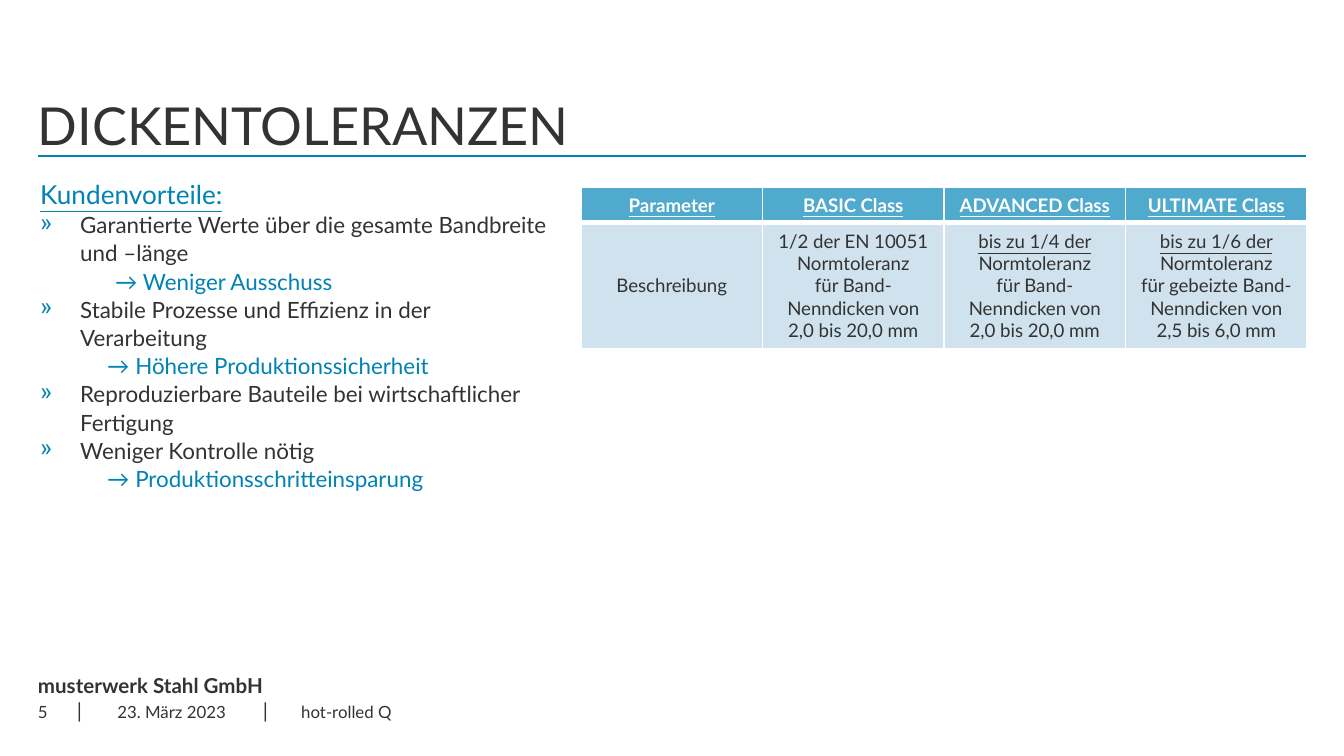
from dataclasses import dataclass

from lxml.etree import SubElement
from pptx import Presentation
from pptx.dml.color import RGBColor
from pptx.enum.shapes import MSO_CONNECTOR
from pptx.enum.text import MSO_ANCHOR, MSO_AUTO_SIZE, PP_ALIGN
from pptx.oxml.ns import qn
from pptx.util import Pt


@dataclass(frozen=True)
class Theme:
    font: str = "Lato"
    text: str = "333333"
    accent: str = "0082B4"
    header: str = "50AACD"
    cell: str = "D0E2ED"
    white: str = "FFFFFF"
    title_size: int = 28
    heading_size: int = 14
    body_size: int = 12
    company_size: int = 11
    table_size: int = 10
    footer_size: int = 9


THEME = Theme()
EMU_PER_PX = 914400 / 134.4
SLIDE_WIDTH, SLIDE_HEIGHT = 1344, 756
LEFT, RIGHT, RULE_TOP = 38, 1306, 156
BULLET_INDENT = 40

TITLE = "DICKENTOLERANZEN"
COMPANY = "musterwerk Stahl GmbH"
HEADING = "Kundenvorteile:"
# Each benefit: text, its result, left indent of the result in px
BENEFITS = [
    ("Garantierte Werte über die gesamte Bandbreite und –länge", "→ Weniger Ausschuss", 75),
    ("Stabile Prozesse und Effizienz in der Verarbeitung", "→ Höhere Produktionssicherheit", 67),
    ("Reproduzierbare Bauteile bei wirtschaftlicher Fertigung", None, 0),
    ("Weniger Kontrolle nötig", "→ Produktionsschritteinsparung", 67),
]
# Each column: heading, underlined opening, paragraphs
COLUMNS = [
    ("Parameter", "", ["Beschreibung"]),
    ("BASIC Class", "",
     ["1/2 der EN 10051 Normtoleranz", "für Band-Nenndicken von 2,0 bis 20,0 mm"]),
    ("ADVANCED Class", "bis zu 1/4 der ",
     ["Normtoleranz", "für Band-Nenndicken von 2,0 bis 20,0 mm"]),
    ("ULTIMATE Class", "bis zu 1/6 der ",
     ["Normtoleranz", "für gebeizte Band-Nenndicken von 2,5 bis 6,0 mm"]),
]
TABLE_LEFT, TABLE_TOP, TABLE_WIDTH = 581, 187, 726
ROW_HEIGHTS = [34, 125]
# Each footer field: text, left, width, has side insets, alignment
FOOTER_FIELDS = [
    ("5", LEFT, 42, False, PP_ALIGN.LEFT),
    ("23. März 2023", 79, 185, True, PP_ALIGN.CENTER),
    ("hot-rolled Q", 288, 613, True, PP_ALIGN.LEFT),
]
SEPARATOR_LEFTS = [77, 263]


def px(value):
    return round(value * EMU_PER_PX)


def style(paragraph, size, color=THEME.text, bold=False, underline=False):
    font = paragraph.font
    font.name, font.size = THEME.font, Pt(size)
    font.bold, font.underline = bold, underline
    font.color.rgb = RGBColor.from_string(color)


def add_frame(slide, left, top, width, height, insets=False, anchor=MSO_ANCHOR.TOP):
    shape = slide.shapes.add_textbox(px(left), px(top), px(width), px(height))
    frame = shape.text_frame
    frame.word_wrap = True
    frame.vertical_anchor = anchor
    if not insets:
        frame.margin_left = frame.margin_right = frame.margin_top = frame.margin_bottom = 0
    return frame


def add_label(slide, text, box, size, bold=False, insets=False,
              anchor=MSO_ANCHOR.TOP, align=PP_ALIGN.LEFT):
    paragraph = add_frame(slide, *box, insets, anchor).paragraphs[0]
    paragraph.text = text
    paragraph.alignment = align
    style(paragraph, size, bold=bold)
    return paragraph


def set_indent(paragraph, left, first_line=0):
    properties = paragraph._p.get_or_add_pPr()
    properties.set("marL", str(px(left)))
    properties.set("indent", str(px(first_line)))
    return properties


def add_bullet(paragraph):
    properties = set_indent(paragraph, BULLET_INDENT, -BULLET_INDENT)
    color = SubElement(properties, qn("a:buClr"))
    SubElement(color, qn("a:srgbClr"), val=THEME.accent)
    SubElement(properties, qn("a:buChar"), char="»")


def add_rule(slide):
    rule = slide.shapes.add_connector(
        MSO_CONNECTOR.STRAIGHT, px(LEFT), px(RULE_TOP), px(RIGHT), px(RULE_TOP))
    rule.line.color.rgb = RGBColor.from_string(THEME.accent)
    rule.line.width = Pt(1.5)
    SubElement(rule._element.spPr, qn("a:effectLst"))


def add_benefits(slide):
    frame = add_frame(slide, 27, 172, 546, 327, insets=True)
    frame.auto_size = MSO_AUTO_SIZE.SHAPE_TO_FIT_TEXT
    heading = frame.paragraphs[0]
    heading.text = HEADING
    style(heading, THEME.heading_size, THEME.accent, underline=True)
    for benefit, result, result_indent in BENEFITS:
        paragraph = frame.add_paragraph()
        paragraph.text = benefit
        add_bullet(paragraph)
        paragraph.line_spacing = 1.05
        style(paragraph, THEME.body_size)
        if result:
            paragraph = frame.add_paragraph()
            paragraph.text = result
            set_indent(paragraph, result_indent)
            paragraph.line_spacing = 1.05
            style(paragraph, THEME.body_size, THEME.accent)


def format_cell(cell, fill, top=1, bottom=1):
    """Give the cell its fill and white borders, with widths in points."""
    properties = cell._tc.get_or_add_tcPr()
    for side, width in (("L", 1), ("R", 1), ("T", top), ("B", bottom)):
        border = SubElement(properties, qn(f"a:ln{side}"), w=str(Pt(width)))
        SubElement(SubElement(border, qn("a:solidFill")), qn("a:srgbClr"), val=THEME.white)
    cell.fill.solid()
    cell.fill.fore_color.rgb = RGBColor.from_string(fill)


def add_class_table(slide):
    table = slide.shapes.add_table(
        len(ROW_HEIGHTS), len(COLUMNS), px(TABLE_LEFT), px(TABLE_TOP),
        px(TABLE_WIDTH), px(sum(ROW_HEIGHTS))).table
    table.horz_banding = False
    for row, height in zip(table.rows, ROW_HEIGHTS):
        row.height = px(height)
    for index, (heading, opening, lines) in enumerate(COLUMNS):
        table.columns[index].width = px(TABLE_WIDTH / len(COLUMNS))
        header, body = table.cell(0, index), table.cell(1, index)
        format_cell(header, THEME.header, bottom=3)
        format_cell(body, THEME.cell, top=3)
        body.vertical_anchor = MSO_ANCHOR.MIDDLE

        paragraph = header.text_frame.paragraphs[0]
        paragraph.text = heading
        paragraph.alignment = PP_ALIGN.CENTER
        style(paragraph, THEME.table_size, THEME.white, bold=True, underline=True)

        frame = body.text_frame
        for number, line in enumerate(lines):
            paragraph = frame.add_paragraph() if number else frame.paragraphs[0]
            paragraph.alignment = PP_ALIGN.CENTER
            style(paragraph, THEME.table_size)
            if opening and number == 0:
                run = paragraph.add_run()
                run.text = opening
                run.font.underline = True
            paragraph.add_run().text = line


def add_footer(slide):
    add_label(slide, COMPANY, (LEFT, 673, 866, 26), THEME.company_size, bold=True)
    for left in SEPARATOR_LEFTS:
        add_label(slide, "|", (left, 698, 30, 26), THEME.company_size)
    for text, left, width, insets, align in FOOTER_FIELDS:
        add_label(slide, text, (left, 692, width, 40), THEME.footer_size,
                  insets=insets, anchor=MSO_ANCHOR.MIDDLE, align=align)


def main():
    presentation = Presentation()
    presentation.slide_width, presentation.slide_height = px(SLIDE_WIDTH), px(SLIDE_HEIGHT)
    slide = presentation.slides.add_slide(presentation.slide_layouts[6])
    add_rule(slide)
    title = add_label(slide, TITLE, (LEFT, 26, RIGHT - LEFT, 130), THEME.title_size,
                      anchor=MSO_ANCHOR.BOTTOM)
    title.line_spacing = Pt(32)
    add_benefits(slide)
    add_class_table(slide)
    add_footer(slide)
    presentation.save("out.pptx")


if __name__ == "__main__":
    main()
